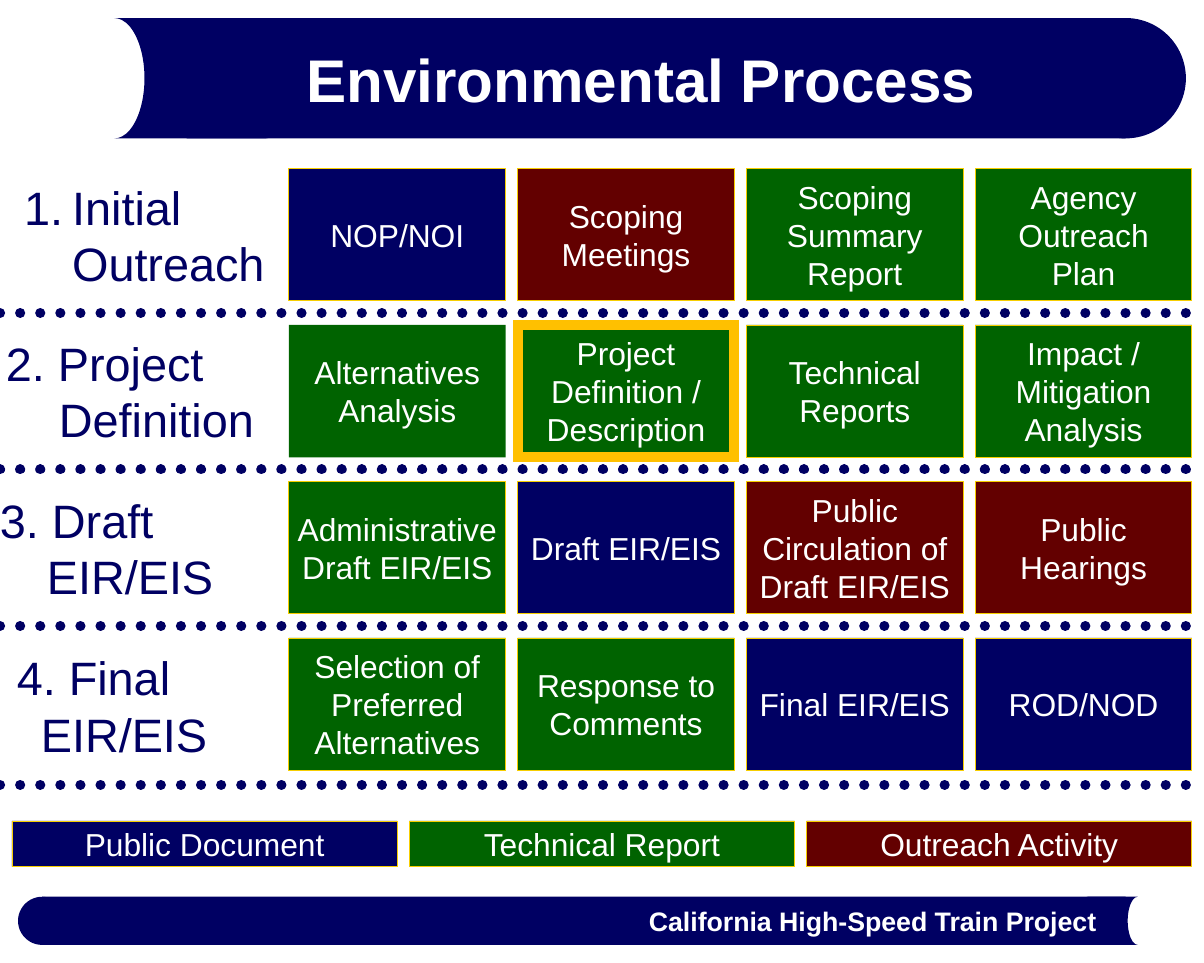
from lxml.etree import SubElement
from pptx import Presentation
from pptx.dml.color import RGBColor
from pptx.enum.dml import MSO_LINE
from pptx.enum.shapes import MSO_CONNECTOR, MSO_SHAPE as Preset
from pptx.enum.text import MSO_ANCHOR, MSO_AUTO_SIZE, PP_ALIGN
from pptx.oxml.ns import qn
from pptx.util import Pt

NAVY = RGBColor(0x00, 0x00, 0x63)
GREEN = RGBColor(0x00, 0x63, 0x00)
MAROON = RGBColor(0x63, 0x00, 0x00)
GOLD = RGBColor(0xF7, 0xCE, 0x00)
AMBER = RGBColor(0xFF, 0xC0, 0x00)
WHITE = RGBColor(0xFF, 0xFF, 0xFF)
FONT = "Arial"
PX = 9144  # EMU, 100 px to the inch

TITLE = "Environmental Process"
FOOTER = "California High-Speed Train Project"

# preset, left, top, width, height, rotation
BANNERS = [
    (Preset.OVAL, 885, 15, 100, 100, 0),
    (Preset.RECTANGLE, 155, 15, 780, 100, 0),
    (Preset.FLOWCHART_STORED_DATA, 95, 15, 150, 100, 180),
    (Preset.RECTANGLE, 35, 745, 900, 40, 0),
    (Preset.OVAL, 15, 745, 40, 40, 0),
    (Preset.FLOWCHART_STORED_DATA, 895, 745, 50, 40, 0),
]

# text, left, top, indent of the second line, numbered automatically
STAGES = [
    ("Initial Outreach", 20, 140, 40, True),
    ("2. Project\nDefinition", 5, 270, 44, False),
    ("3. Draft\nEIR/EIS", 0, 400, 39, False),
    ("4. Final\nEIR/EIS", 14, 531, 20, False),
]

STEPS = [
    [("NOP/NOI", NAVY), ("Scoping Meetings", MAROON),
     ("Scoping Summary\nReport", GREEN), ("Agency Outreach\nPlan", GREEN)],
    [("Alternatives Analysis", GREEN), ("Project\nDefinition / Description", GREEN),
     ("Technical Reports", GREEN), ("Impact / Mitigation\nAnalysis", GREEN)],
    [("Administrative Draft EIR/EIS", GREEN), ("Draft EIR/EIS", NAVY),
     ("Public Circulation of Draft EIR/EIS", MAROON), ("Public\nHearings", MAROON)],
    [("Selection of Preferred Alternatives", GREEN), ("Response to Comments", GREEN),
     ("Final EIR/EIS", NAVY), ("ROD/NOD", NAVY)],
]
OUTLINES = {(1, 0): None, (1, 1): (AMBER, 6)}  # (row, column): (colour, points)
THIN_GOLD = (GOLD, 0.5)

LEGEND = [("Public Document", NAVY), ("Technical Report", GREEN),
          ("Outreach Activity", MAROON)]

GRID_LEFT, GRID_TOP, STEP_WIDTH, STEP_HEIGHT = 240, 140, 180, 110
COLUMN_PITCH, ROW_PITCH = 190, 130
LEGEND_LEFT, LEGEND_TOP, LEGEND_WIDTH, LEGEND_HEIGHT, LEGEND_PITCH = 10, 682, 320, 38, 330
DIVIDERS = [260, 390, 520, 652]


def emu(*lengths):
    return [length * PX for length in lengths]


def write(shape, text, size, color, align=PP_ALIGN.CENTER, bold=False, inset=5):
    frame = shape.text_frame
    frame.text = text
    frame.word_wrap = True
    frame.auto_size = MSO_AUTO_SIZE.NONE
    frame.vertical_anchor = MSO_ANCHOR.MIDDLE
    frame.margin_left = frame.margin_right = inset * PX
    frame.margin_top = frame.margin_bottom = inset * PX
    for paragraph in frame.paragraphs:
        paragraph.alignment = align
        for run in paragraph.runs:
            run.font.name, run.font.size = FONT, Pt(size)
            run.font.bold, run.font.color.rgb = bold, color


def add_block(shapes, preset, box, fill, outline=None):
    """Add a filled shape; an outline (colour, points) gets square corners."""
    block = shapes.add_shape(preset, *emu(*box))
    block.shadow.inherit = False
    block.fill.solid()
    block.fill.fore_color.rgb = fill
    if outline:
        block.line.color.rgb, block.line.width = outline[0], Pt(outline[1])
        SubElement(block.element.spPr.find(qn("a:ln")), qn("a:miter"), lim="800000")
    else:
        block.line.fill.background()
    return block


def add_stage(shapes, text, left, top, indent, numbered):
    label = shapes.add_textbox(*emu(left, top, 220, STEP_HEIGHT))
    write(label, text, 28, NAVY, PP_ALIGN.LEFT, inset=0)
    properties = label.text_frame.paragraphs[-1]._p.get_or_add_pPr()
    properties.set("marL", str(indent * PX))
    if numbered:
        properties.set("indent", str(-indent * PX))
        SubElement(properties, qn("a:buFont"), typeface=FONT)
        SubElement(properties, qn("a:buAutoNum"), type="arabicPeriod")


def add_divider(shapes, top):
    """Draw a row of round dots across the slide."""
    divider = shapes.add_connector(MSO_CONNECTOR.STRAIGHT, *emu(0, top, 1000, top))
    divider.line.color.rgb = NAVY
    divider.line.width = Pt(6)
    divider.line.dash_style = MSO_LINE.ROUND_DOT
    properties = divider.element.spPr
    properties.find(qn("a:ln")).set("cap", "rnd")
    SubElement(properties, qn("a:effectLst"))


def main():
    presentation = Presentation()
    presentation.slide_width, presentation.slide_height = emu(1000, 800)
    slide = presentation.slides.add_slide(presentation.slide_layouts[5])
    shapes = slide.shapes

    for preset, *box, rotation in BANNERS:
        add_block(shapes, preset, box, NAVY).rotation = rotation

    title = shapes.title
    title.left, title.top, title.width, title.height = emu(120, 15, 825, 100)
    write(title, TITLE, 36, WHITE, bold=True)
    shapes.element.append(title.element)  # in front of the banner

    footer = shapes.add_textbox(*emu(520, 745, 410, 40))
    write(footer, FOOTER, 16, WHITE, bold=True, inset=0)

    for top in DIVIDERS:
        add_divider(shapes, top)
    for stage in STAGES:
        add_stage(shapes, *stage)

    for row, steps in enumerate(STEPS):
        for column, (text, fill) in enumerate(steps):
            box = (GRID_LEFT + column * COLUMN_PITCH, GRID_TOP + row * ROW_PITCH,
                   STEP_WIDTH, STEP_HEIGHT)
            outline = OUTLINES.get((row, column), THIN_GOLD)
            write(add_block(shapes, Preset.RECTANGLE, box, fill, outline), text, 19, WHITE)

    for index, (text, fill) in enumerate(LEGEND):
        box = (LEGEND_LEFT + index * LEGEND_PITCH, LEGEND_TOP, LEGEND_WIDTH, LEGEND_HEIGHT)
        write(add_block(shapes, Preset.RECTANGLE, box, fill, THIN_GOLD), text, 19, WHITE)

    presentation.save("out.pptx")


if __name__ == "__main__":
    main()
